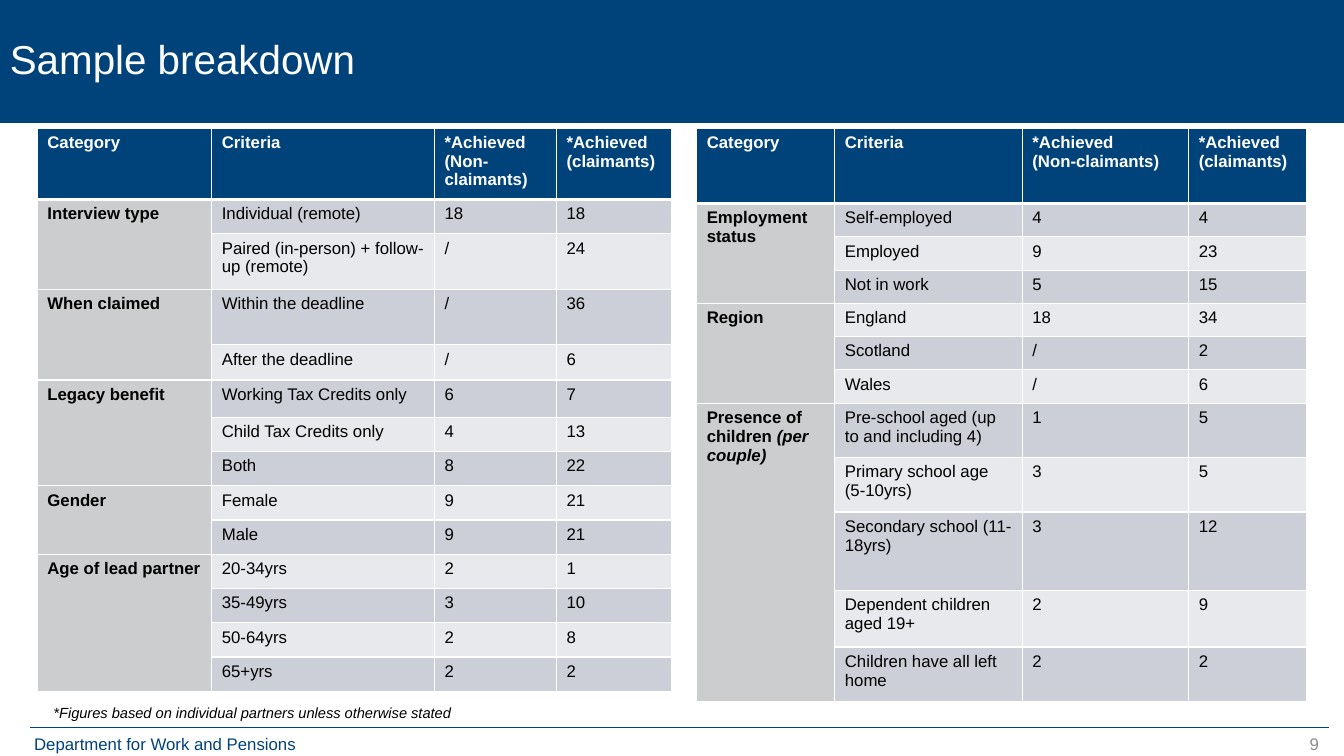
import pptx
import pptx.dml.color
import pptx.enum.shapes
import pptx.enum.text
import pptx.oxml
import pptx.oxml.ns
import pptx.util
from lxml import etree

Inches = pptx.util.Inches
Pt = pptx.util.Pt
ALIGN = pptx.enum.text.PP_ALIGN
ANCHOR = pptx.enum.text.MSO_ANCHOR

NAVY, WHITE, BLACK, GREY = "00437B", "FFFFFF", "000000", "8C8C8C"
CATEGORY_FILL = "CCCDCE"
STRIPES = ["CCCFD7", "E7E9EC"]
HEADINGS = ["Category", "Criteria", "*Achieved\n(Non-claimants)", "*Achieved (claimants)"]

INTERVIEW_GROUPS = [
    ("Interview type", [
        (0.34, "Individual (remote)", "18", "18"),
        (0.55, "Paired (in-person) + follow-up (remote)", "/", "24")]),
    ("When claimed", [
        (0.55, "Within the deadline", "/", "36"),
        (0.35, "After the deadline", "/", "6")]),
    ("Legacy benefit", [
        (0.37, "Working Tax Credits only", "6", "7"),
        (0.34, "Child Tax Credits only", "4", "13"),
        (0.34, "Both", "8", "22")]),
    ("Gender", [
        (0.34, "Female", "9", "21"),
        (0.34, "Male", "9", "21")]),
    ("Age of lead partner", [
        (0.34, "20-34yrs", "2", "1"),
        (0.34, "35-49yrs", "3", "10"),
        (0.34, "50-64yrs", "2", "8"),
        (0.34, "65+yrs", "2", "2")]),
]
HOUSEHOLD_GROUPS = [
    ("Employment status", [
        (0.33, "Self-employed", "4", "4"),
        (0.33, "Employed", "9", "23"),
        (0.33, "Not in work", "5", "15")]),
    ("Region", [
        (0.33, "England", "18", "34"),
        (0.33, "Scotland", "/", "2"),
        (0.33, "Wales", "/", "6")]),
    ("Presence of children (per couple)", [
        (0.54, "Pre-school aged (up to and including 4)", "1", "5"),
        (0.54, "Primary school age (5-10yrs)", "3", "5"),
        (0.78, "Secondary school (11-18yrs)", "3", "12"),
        (0.56, "Dependent children aged 19+", "2", "9"),
        (0.54, "Children have all left home", "2", "2")]),
]


def rgb(value):
    """Return the colour for a hex string."""
    return pptx.dml.color.RGBColor.from_string(value)


def style_text(frame, size, color, bold=False, italic=False):
    """Format every run of a text frame."""
    for paragraph in frame.paragraphs:
        for run in paragraph.runs:
            run.font.name = "Arial"
            run.font.size = Pt(size)
            run.font.color.rgb = rgb(color)
            run.font.bold = bold
            run.font.italic = italic


def add_label(slide, box, text, size, color, align=ALIGN.LEFT, anchor=ANCHOR.TOP, italic=False):
    """Add a wrapped line of text in a box and return its frame."""
    frame = slide.shapes.add_textbox(*map(Inches, box)).text_frame
    frame.word_wrap = True
    frame.vertical_anchor = anchor
    frame.text = text
    frame.paragraphs[0].alignment = align
    style_text(frame, size, color, italic=italic)
    return frame


def add_title(slide, box, text):
    """Add the title band."""
    band = slide.shapes.add_shape(pptx.enum.shapes.MSO_SHAPE.RECTANGLE, *map(Inches, box))
    band.shadow.inherit = False
    band.fill.solid()
    band.fill.fore_color.rgb = rgb(NAVY)
    band.line.fill.background()
    frame = band.text_frame
    frame.vertical_anchor = ANCHOR.MIDDLE
    frame.text = text
    frame.paragraphs[0].alignment = ALIGN.LEFT
    frame.paragraphs[0].line_spacing = 0.9
    style_text(frame, 28.8, WHITE)


def style_cell(cell, fill, bottom=1):
    """Give a cell white borders and a fill."""
    properties = cell._tc.get_or_add_tcPr()
    for side, width in (("L", 1), ("R", 1), ("T", 1), ("B", bottom)):
        border = etree.SubElement(properties, pptx.oxml.ns.qn(f"a:ln{side}"), w=str(Pt(width)))
        solid = etree.SubElement(border, pptx.oxml.ns.qn("a:solidFill"))
        etree.SubElement(solid, pptx.oxml.ns.qn("a:srgbClr"), val=WHITE)
    cell.fill.solid()
    cell.fill.fore_color.rgb = rgb(fill)


def fill_category(cell, name):
    """Write a bold category name, with its bracketed part in italics."""
    main, bracket, rest = name.partition("(")
    paragraph = cell.text_frame.paragraphs[0]
    paragraph.text = main
    if bracket:
        paragraph.add_run().text = bracket + rest
    style_text(cell.text_frame, 12, BLACK, bold=True)
    for run in paragraph.runs[1:]:
        run.font.italic = True


def add_breakdown(slide, left, top, widths, heading_height, groups):
    """Add a sample table whose category cells span their criteria."""
    criteria = [row for name, rows in groups for row in rows]
    heights = [heading_height] + [row[0] for row in criteria]
    table = slide.shapes.add_table(
        len(heights), len(widths), Inches(left), Inches(top),
        Inches(sum(widths)), Inches(sum(heights))).table
    for column, width in zip(table.columns, widths):
        column.width = Inches(width)
    for row, height in zip(table.rows, heights):
        row.height = Inches(height)

    for index, heading in enumerate(HEADINGS):
        cell = table.cell(0, index)
        cell.text_frame.text = heading
        style_text(cell.text_frame, 12, WHITE, bold=True)
        style_cell(cell, NAVY, bottom=3)

    for number, (height, *values) in enumerate(criteria, 1):
        category = table.cell(number, 0)
        style_cell(category, CATEGORY_FILL)
        ending = category.text_frame.paragraphs[0]._p.get_or_add_endParaRPr()
        ending.set("sz", "1200")
        for index, value in enumerate(values, 1):
            cell = table.cell(number, index)
            cell.text_frame.text = value
            style_text(cell.text_frame, 12, BLACK)
            style_cell(cell, STRIPES[(number - 1) % 2])

    first = 1
    for name, rows in groups:
        last = first + len(rows) - 1
        table.cell(first, 0).merge(table.cell(last, 0))
        fill_category(table.cell(first, 0), name)
        first = last + 1


def add_footer(slide, left, top, width):
    """Add the footer rule, department name and page number."""
    rule = slide.shapes.add_connector(
        pptx.enum.shapes.MSO_CONNECTOR.STRAIGHT,
        Inches(left), Inches(top), Inches(left + width), Inches(top))
    rule.line.color.rgb = rgb(NAVY)
    rule.line.width = Pt(0.5)
    etree.SubElement(rule._element.spPr, pptx.oxml.ns.qn("a:effectLst"))
    add_label(slide, (left - 0.06, top + 0.01, 3.23, 0.3),
              "Department for Work and Pensions", 12, NAVY)
    add_label(slide, (left + width - 3, top + 0.01, 3, 0.4), "9", 12, GREY, ALIGN.RIGHT)


def add_footnote(slide, box, text):
    """Add the note under the tables."""
    frame = add_label(slide, box, text, 10.5, BLACK, anchor=ANCHOR.MIDDLE, italic=True)
    frame.margin_left = frame.margin_right = Inches(0.16)
    frame.margin_top = frame.margin_bottom = Inches(0.08)


def main():
    """Build the slide and save it."""
    deck = pptx.Presentation()
    deck.slide_width, deck.slide_height = Inches(13.33), Inches(7.5)
    slide = deck.slides.add_slide(deck.slide_layouts[6])
    add_footer(slide, 0.3, 7.22, 12.88)
    add_title(slide, (0, 0, 13.33, 1.22), "Sample breakdown")
    add_breakdown(slide, 0.37, 1.27, [1.73, 2.21, 1.21, 1.14], 0.71, INTERVIEW_GROUPS)
    add_breakdown(slide, 6.91, 1.27, [1.37, 1.86, 1.65, 1.17], 0.75, HOUSEHOLD_GROUPS)
    add_footnote(slide, (0.37, 6.89, 5.91, 0.35),
                 "*Figures based on individual partners unless otherwise stated")
    deck.save("out.pptx")


if __name__ == "__main__":
    main()
